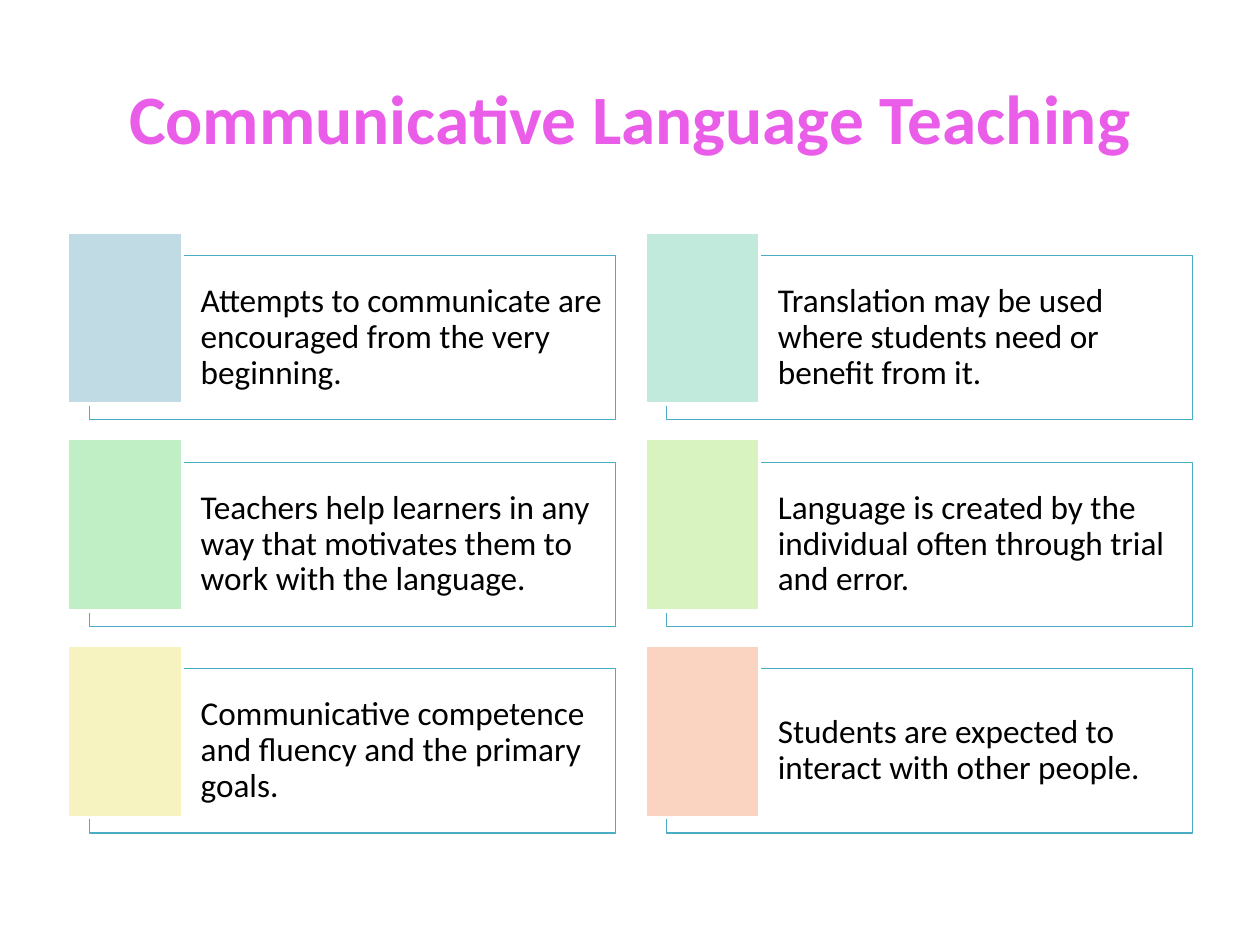
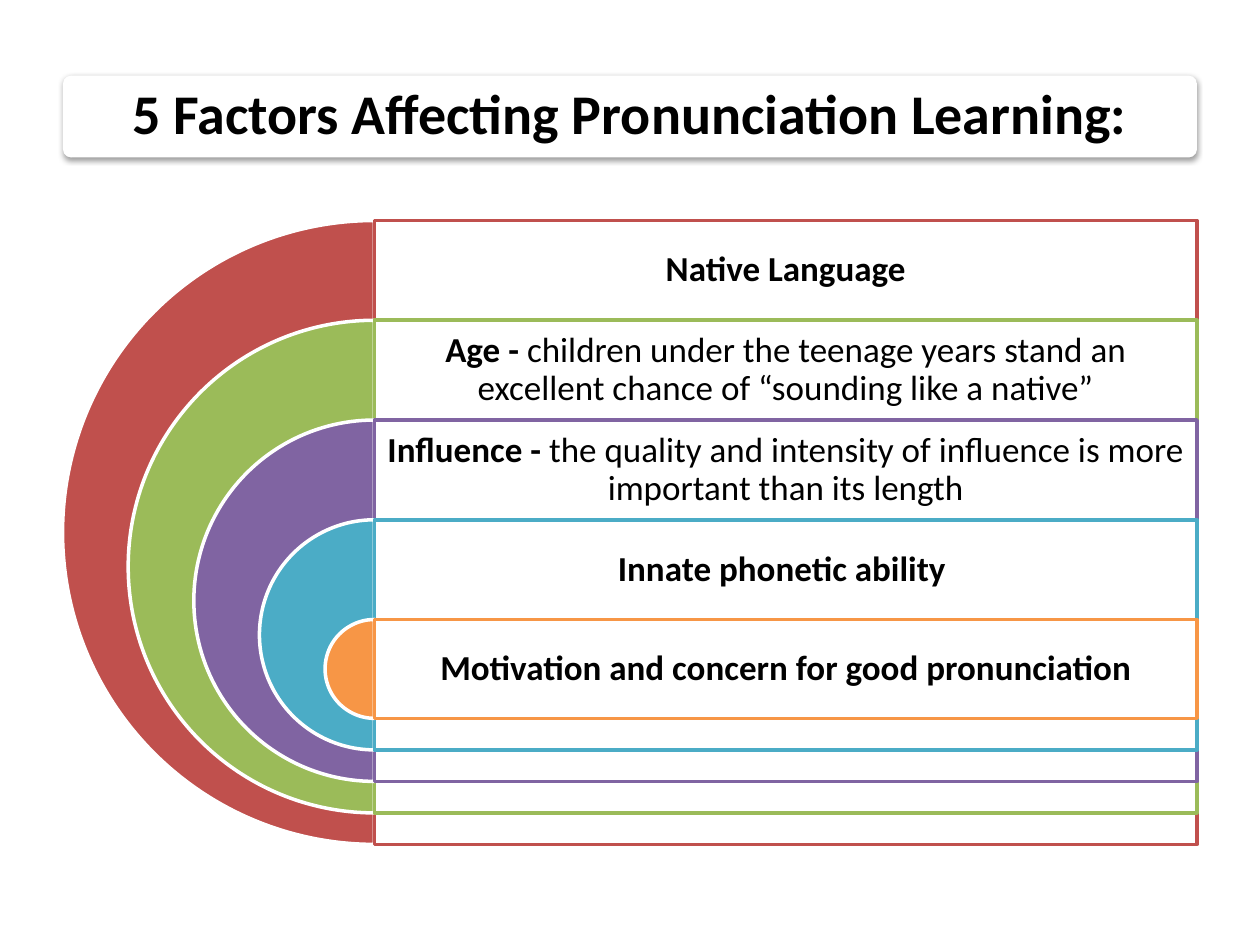
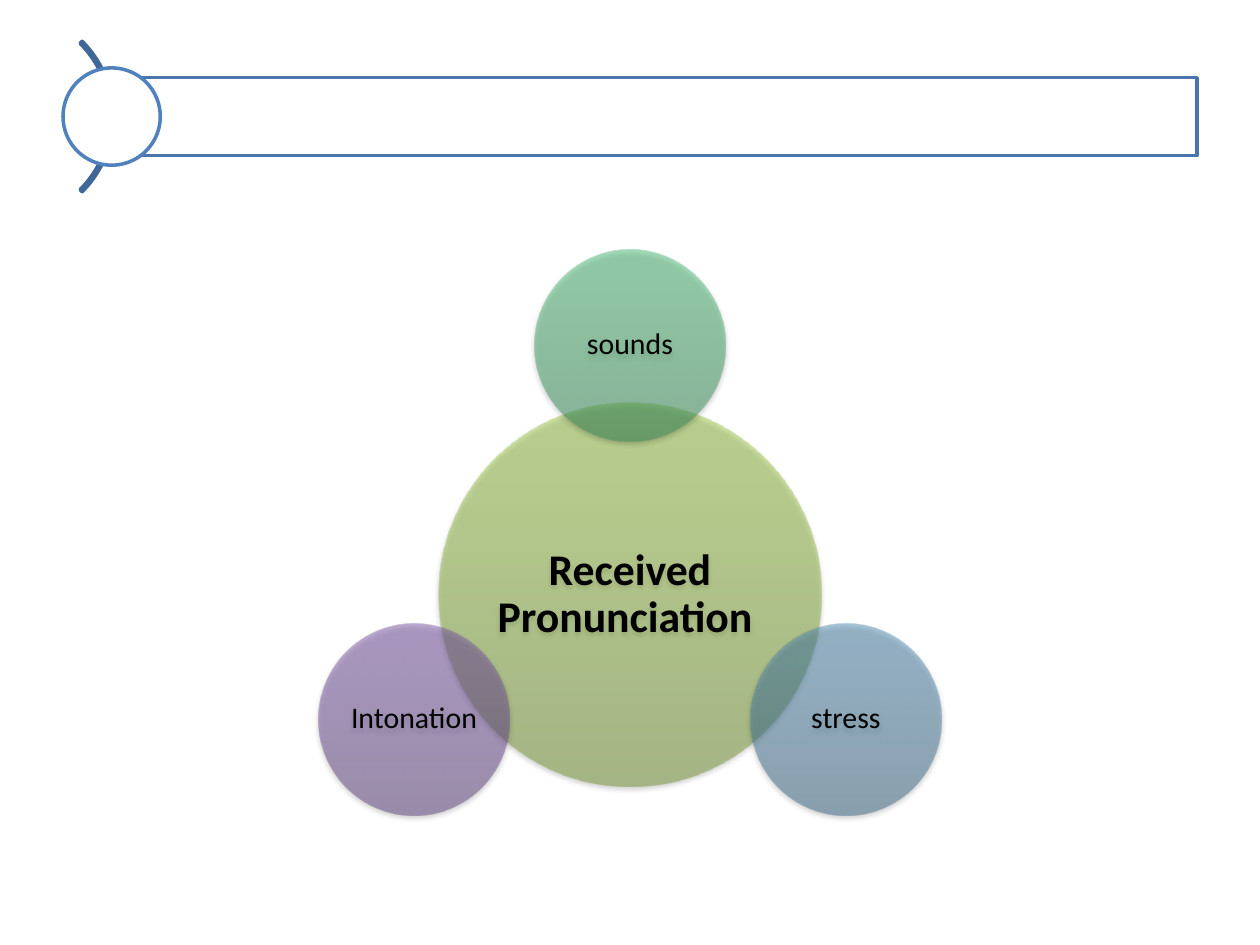
from math import cos, radians, sin

from lxml import etree
from pptx import Presentation
from pptx.dml.color import RGBColor
from pptx.enum.shapes import MSO_SHAPE
from pptx.enum.text import MSO_ANCHOR, PP_ALIGN
from pptx.oxml.ns import qn
from pptx.util import Pt

RECT, ROUND = MSO_SHAPE.RECTANGLE, MSO_SHAPE.ROUNDED_RECTANGLE
OVAL, PIE, ARC = MSO_SHAPE.OVAL, MSO_SHAPE.PIE, MSO_SHAPE.BLOCK_ARC
LEFT, CENTER, MIDDLE = PP_ALIGN.LEFT, PP_ALIGN.CENTER, MSO_ANCHOR.MIDDLE

FONT = "Calibri"
COLORS = {
    "white": "FFFFFF", "black": "000000", "pink": "E95DE9",
    "red": "C0504D", "green": "9BBB59", "purple": "8064A2",
    "teal": "4BACC6", "orange": "F79646",
    "arc": "3F6797", "bar": "4875AC", "knob": "4F81BD",
    "sky": "C1DBE5", "mint": "C1EADD", "leaf": "C0EFC5",
    "lime": "D9F3C0", "cream": "F7F3C0", "peach": "FBD3C1",
}

# Text and accent colour of each card, row by row
CARDS = [
    ("Attempts to communicate are encouraged from the very beginning.", "sky"),
    ("Translation may be used where students need or benefit from it.", "mint"),
    ("Teachers help learners in any way that motivates them to work with the language.", "leaf"),
    ("Language is created by the individual often through trial and error.", "lime"),
    ("Communicative competence and fluency and the primary goals.", "cream"),
    ("Students are expected to interact with other people.", "peach"),
]

# Bold part, plain part, colour
FACTORS = [
    ("Native Language", "", "red"),
    ("Age - ", "children under the teenage years stand an excellent chance of “sounding like a native”", "green"),
    ("Influence - ", "the quality and intensity of influence is more important than its length", "purple"),
    ("Innate phonetic ability ", "", "teal"),
    ("Motivation and concern for good pronunciation", "", "orange"),
]

# Gradients run from bottom to top, with stops at STOPS percent
STOPS = (0, 80, 100)
HUB = ("Received Pronunciation ", ("779737", "9BC348", "9DC746"))
# Text, gradient, angle around the hub
MOONS = [
    ("sounds", ("3B8F5A", "4DBA75", "4BBD75"), -90),
    ("stress", ("3F6A88", "528AB0", "518BB3"), 30),
    ("Intonation", ("5F4480", "7B58A6", "7C57A8"), 150),
]


def rgb(name):
    return RGBColor.from_string(COLORS[name])


def node(parent, tag, **attrs):
    """Append a drawing element with the given attributes."""
    return etree.SubElement(parent, qn("a:" + tag), {k: str(v) for k, v in attrs.items()})


def tint(parent, hue, alpha):
    """Append a colour with its opacity in percent."""
    node(node(parent, "srgbClr", val=hue), "alpha", val=alpha * 1000)


def draw(slide, kind, box, fill=None, line=None, width=2, alpha=100, adjust=()):
    shape = slide.shapes.add_shape(kind, *map(Pt, box))
    shape.shadow.inherit = False
    for i, value in enumerate(adjust):
        shape.adjustments[i] = value
    if fill:
        shape.fill.solid()
        shape.fill.fore_color.rgb = rgb(fill)
        if alpha < 100:
            solid = shape._element.spPr.find(qn("a:solidFill"))
            node(solid[0], "alpha", val=alpha * 1000)
    else:
        shape.fill.background()
    if line:
        shape.line.color.rgb = rgb(line)
        shape.line.width = Pt(width)
    else:
        shape.line.fill.background()
    return shape


def cast(shape, alpha, dist):
    """Give a shape a soft shadow straight below it."""
    effects = shape._element.spPr.find(qn("a:effectLst"))
    shade = node(effects, "outerShdw", blurRad=Pt(3.1), dist=Pt(dist),
                 dir=5400000, rotWithShape=0)
    tint(shade, COLORS["black"], alpha)


def blend(shape, hues):
    """Replace the empty fill by a half clear gradient."""
    props = shape._element.spPr
    grad = etree.Element(qn("a:gradFill"), rotWithShape="1")
    stops = node(grad, "gsLst")
    for pos, hue in zip(STOPS, hues):
        tint(node(stops, "gs", pos=pos * 1000), hue, 50)
    node(grad, "lin", ang=16200000, scaled=0)
    props.replace(props.find(qn("a:noFill")), grad)


def write(shape, text, size=20, color="black", bold=False, plain="",
          align=CENTER, inset=(5.8,) * 4, spacing=0.9):
    """Set the text of a shape; plain follows it without bold."""
    frame = shape.text_frame
    frame.word_wrap = True
    frame.vertical_anchor = MIDDLE
    (frame.margin_left, frame.margin_top,
     frame.margin_right, frame.margin_bottom) = map(Pt, inset)
    para = frame.paragraphs[0]
    para.alignment = align
    para.line_spacing = spacing
    for part, heavy in ((text, bold), (plain, False)):
        if part:
            run = para.add_run()
            run.text = part
            run.font.name = FONT
            run.font.size = Pt(size)
            run.font.bold = heavy
            run.font.color.rgb = rgb(color)


def label(slide, box, text, **style):
    write(slide.shapes.add_textbox(*map(Pt, box)), text, **style)


def teaching(slide):
    label(slide, (36, 21.6, 648, 90), "Communicative Language Teaching",
          size=39.6, color="pink", bold=True, spacing=1)
    for i, (text, accent) in enumerate(CARDS):
        row, col = divmod(i, 2)
        x, y = 51.2 + col * 329.8, 146 + row * 118.1
        card = draw(slide, RECT, (x, y, 300.4, 93.8), "white", "teal",
                    width=0.75, alpha=40)
        write(card, text, size=19, align=LEFT, inset=(63.5, 5.8, 5.8, 5.8))
        draw(slide, RECT, (x - 12.5, y - 13.5, 65.6, 98.5), accent, "white")


def factors(slide):
    head = draw(slide, ROUND, (36, 43.2, 648, 46.8), "white", adjust=[0.1])
    cast(head, 38, 1.6)
    write(head, "5 Factors Affecting Pronunciation Learning:", size=32, bold=True)
    mid, top, step, right = 214, 126, 57, 684
    for i, (text, plain, color) in enumerate(FACTORS):
        y, size = top + i * step, 356.5 - i * 75
        draw(slide, PIE, (mid - size / 2, y, size, size), color, "white",
             adjust=[54, 162])
        draw(slide, RECT, (mid, y, right - mid, size), "white", color, alpha=90)
        label(slide, (mid, y, right - mid, step), text, bold=True, plain=plain)


def ball(slide, x, y, width, hues, text, **style):
    """Draw a shaded circle around a centre."""
    shape = draw(slide, OVAL, (x - width / 2, y - width / 2, width, width))
    blend(shape, hues)
    cast(shape, 35, 1.8)
    write(shape, text, inset=(1.8,) * 4, **style)


def sounds(slide):
    draw(slide, ARC, (-56.8, 5.8, 121.6, 121.6), line="arc", adjust=[189, 27, 0.014])
    draw(slide, RECT, (64, 44.4, 620, 44.6), "white", "bar")
    draw(slide, OVAL, (36, 38.8, 55.6, 55.6), "white", "knob")
    x, y, width, orbit = 360, 339.8, 219, 142.5
    text, hues = HUB
    ball(slide, x, y, width, hues, text, size=25, bold=True)
    for text, hues, angle in MOONS:
        turn = radians(angle)
        ball(slide, x + orbit * cos(turn), y + orbit * sin(turn), width / 2,
             hues, text, size=17)


def main():
    deck = Presentation()
    deck.slide_width, deck.slide_height = Pt(720), Pt(540)
    for build in (teaching, factors, sounds):
        build(deck.slides.add_slide(deck.slide_layouts[6]))
    deck.save("out.pptx")


if __name__ == "__main__":
    main()
